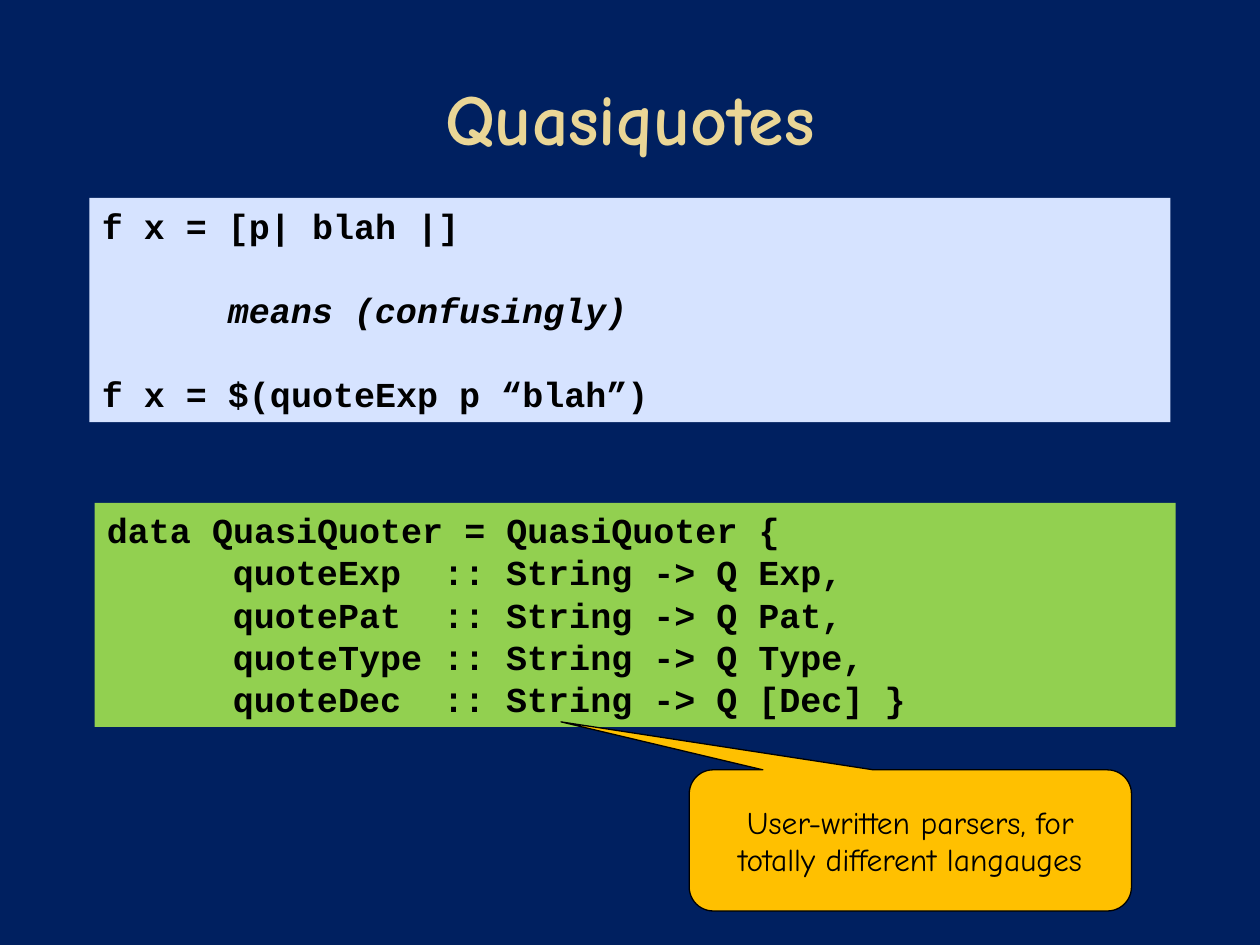
from pptx import Presentation
from pptx.dml.color import RGBColor
from pptx.enum import shapes, text
from pptx.util import Inches, Pt

NAVY = RGBColor(0x00, 0x20, 0x60)
CREAM = RGBColor(0xEA, 0xD6, 0x96)
PALE_BLUE = RGBColor(0xD6, 0xE3, 0xFF)
GREEN = RGBColor(0x92, 0xD0, 0x50)
AMBER = RGBColor(0xFF, 0xC0, 0x00)
BLACK = RGBColor(0x00, 0x00, 0x00)
PROSE, CODE = "Comic Neue", "Courier New"
LINE_PITCH = Pt(24)
TAB_WIDTH = Inches(1)

TITLE = "Quasiquotes"
# Each line of code: leading tab and words, italic, lines of space before
MEANING = [
    ("f x = [p| blah |]", False, 0),
    ("\tmeans (confusingly)", True, 1),
    ("f x = $(quoteExp p “blah”)", False, 1),
]
FIELDS = [("quoteExp", "Exp,"), ("quotePat", "Pat,"),
          ("quoteType", "Type,"), ("quoteDec", "[Dec] }")]
DATA_TYPE = [("data QuasiQuoter = QuasiQuoter {", False, 0)] + [
    (f"\t{field:<9} :: String -> Q {result}", False, 0) for field, result in FIELDS
]
CODE_PANELS = [(0.71, 1.57, PALE_BLUE, MEANING), (0.75, 3.99, GREEN, DATA_TYPE)]
PANEL_SIZE = (8.58, 1.78)
REMARK = "User-written parsers, for totally different langauges"


def add_run(paragraph, words, font_name, size, color, bold=False, italic=False):
    run = paragraph.add_run()
    run.text = words
    font = run.font
    font.name, font.size, font.bold, font.italic = font_name, Pt(size), bold, italic
    font.color.rgb = color


def add_panel(slide, kind, box, fill, anchor):
    panel = slide.shapes.add_shape(kind, *map(Inches, box))
    panel.shadow.inherit = False
    panel.fill.solid()
    panel.fill.fore_color.rgb = fill
    panel.line.fill.background()
    panel.text_frame.word_wrap = True
    panel.text_frame.vertical_anchor = anchor
    return panel


def add_code(slide, left, top, fill, lines):
    panel = add_panel(slide, shapes.MSO_SHAPE.RECTANGLE, (left, top, *PANEL_SIZE),
                      fill, text.MSO_ANCHOR.TOP)
    frame = panel.text_frame
    for number, (words, italic, gap) in enumerate(lines):
        paragraph = frame.add_paragraph() if number else frame.paragraphs[0]
        paragraph.alignment = text.PP_ALIGN.LEFT
        paragraph.line_spacing = LINE_PITCH
        paragraph.space_before = LINE_PITCH * gap
        paragraph._p.get_or_add_pPr().set("defTabSz", str(int(TAB_WIDTH)))
        add_run(paragraph, words, CODE, 20, BLACK, bold=True, italic=italic)


def add_callout(slide):
    callout = add_panel(slide, shapes.MSO_SHAPE.ROUNDED_RECTANGULAR_CALLOUT,
                        (5.47, 6.11, 3.51, 1.12), AMBER, text.MSO_ANCHOR.MIDDLE)
    for index, value in enumerate((-0.79, -0.84, 0.17)):
        callout.adjustments[index] = value
    callout.line.color.rgb = BLACK
    callout.line.width = Pt(0.75)
    paragraph = callout.text_frame.paragraphs[0]
    paragraph.alignment = text.PP_ALIGN.CENTER
    add_run(paragraph, REMARK, PROSE, 18, BLACK)


def add_title(slide):
    title = slide.shapes.title
    title.left, title.top, title.width, title.height = map(Inches, (0.5, 0.3, 9, 1.25))
    title.text_frame.vertical_anchor = text.MSO_ANCHOR.MIDDLE
    paragraph = title.text_frame.paragraphs[0]
    paragraph.alignment = text.PP_ALIGN.CENTER
    add_run(paragraph, TITLE, PROSE, 41, CREAM, bold=True)


def main():
    deck = Presentation()
    deck.slide_width, deck.slide_height = Inches(10), Inches(7.5)
    slide = deck.slides.add_slide(deck.slide_layouts.get_by_name("Title Only"))
    slide.background.fill.solid()
    slide.background.fill.fore_color.rgb = NAVY
    add_title(slide)
    for panel in CODE_PANELS:
        add_code(slide, *panel)
    add_callout(slide)
    deck.save("out.pptx")


if __name__ == "__main__":
    main()
